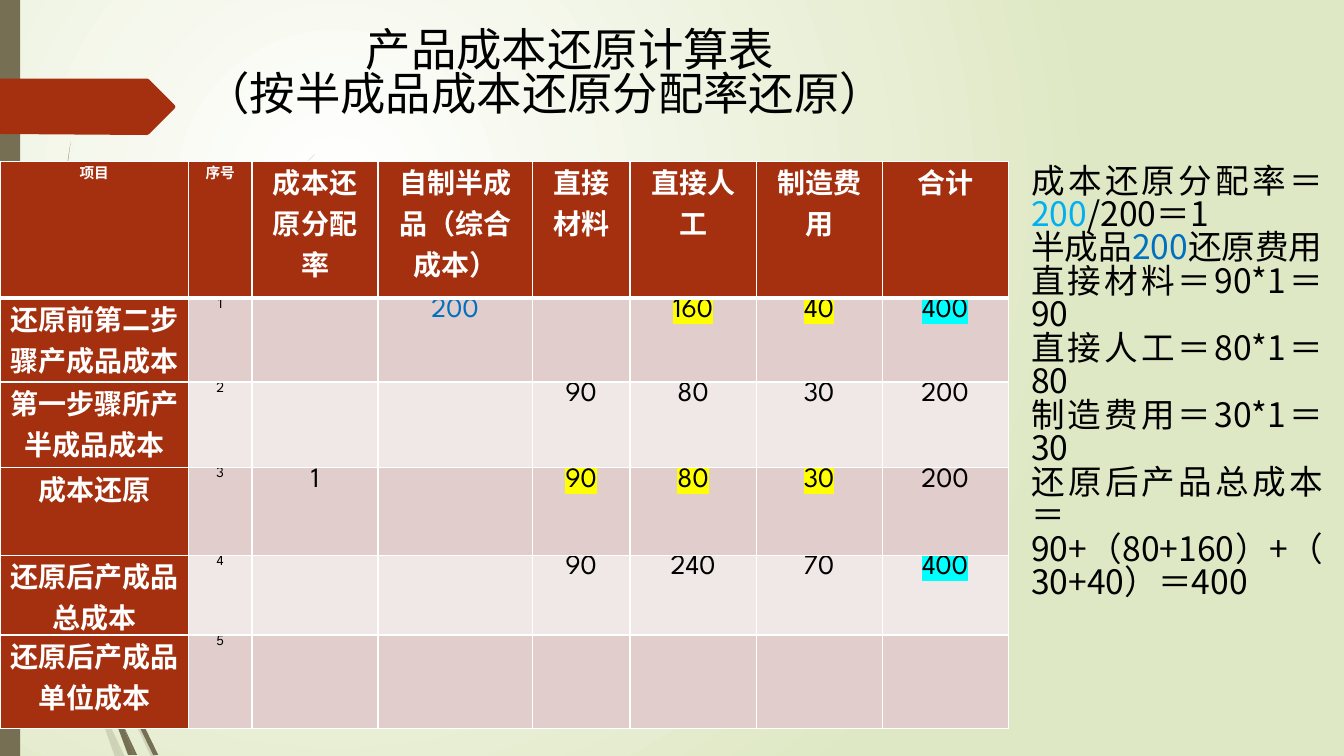
from dataclasses import dataclass

from pptx import Presentation
from pptx.dml.color import RGBColor
from pptx.enum.shapes import MSO_SHAPE
from pptx.enum.text import MSO_ANCHOR, MSO_AUTO_SIZE, PP_ALIGN
from pptx.oxml.ns import qn
from pptx.oxml.xmlchemy import OxmlElement
from pptx.util import Pt

PX = 9144
RECT = MSO_SHAPE.RECTANGLE
TOP = MSO_ANCHOR.TOP
GROW = MSO_AUTO_SIZE.SHAPE_TO_FIT_TEXT
LEFT, MID, JUST = PP_ALIGN.LEFT, PP_ALIGN.CENTER, PP_ALIGN.JUSTIFY


@dataclass(frozen=True)
class Theme:
    white: str = "FFFFFF"
    black: str = "000000"
    green: str = "DFE8C4"
    brown: str = "766F54"
    red: str = "A53010"
    bands: tuple = ("E1CDCC", "F0E8E7")
    blue: str = "0070C0"
    sky: str = "00B0F0"
    yellow: str = "FFFF00"
    cyan: str = "00FFFF"
    latin: str = "League Spartan"
    asian: str = "Noto Sans CJK SC"
    title: float = 32.4
    side: float = 24
    cell: float = 20
    small: float = 10.5


T = Theme()

PALE = [
    [(92, 607), (88, 596), (88, 610), (123, 694), (150, 751), (155, 751), (127, 692)],
    [(119, 751), (124, 751), (105, 711)],
    [(88, 584), (92, 522), (110, 462), (132, 405), (160, 349), (193, 296),
     (229, 245), (268, 198), (290, 175), (312, 154), (312, 153), (289, 175),
     (268, 197), (228, 244), (191, 294), (158, 348), (129, 403), (107, 461),
     (89, 522), (85, 584), (85, 586), (88, 596)],
    [(101, 714), (114, 751), (119, 751)],
    [(96, 692), (93, 683), (99, 707), (101, 714), (119, 751), (105, 711)],
]
DARK = [
    [(113, 649), (110, 641), (111, 656), (132, 708), (152, 749), (157, 749), (136, 706)],
    [(60, 472), (58, 453), (55, 401), (54, 349), (55, 297), (58, 245), (63, 193),
     (70, 141), (62, 193), (56, 245), (53, 297), (52, 349), (52, 399), (55, 449)],
    [(133, 749), (136, 749), (122, 719)],
    [(117, 722), (127, 749), (131, 749)],
    [(116, 706), (110, 691), (116, 717), (117, 722), (130, 749), (133, 749), (122, 719)],
]
ARROW = [(0, 78), (146, 78), (148, 79), (173, 104), (174, 106), (173, 108),
         (148, 133), (146, 134), (0, 133)]

COLS = [187, 63, 125, 153, 97, 125, 125, 125]
ROWS = [136, 83, 85, 87, 79, 93]
DATA = [
    ["项目", "序号", "成本还原分配率", "自制半成品（综合成本）",
     "直接材料", "直接人工", "制造费用", "合计"],
    ["还原前第二步骤产成品成本", "1", "", "200", "", "160", "40", "400"],
    ["第一步骤所产半成品成本", "2", "", "", "90", "80", "30", "200"],
    ["成本还原", "3", "1", "", "90", "80", "30", "200"],
    ["还原后产成品总成本", "4", "", "", "90", "240", "70", "400"],
    ["还原后产成品单位成本", "5", "", "", "", "", "", ""],
]
MARKS = {(1, 5): T.yellow, (1, 6): T.yellow, (1, 7): T.cyan, (3, 4): T.yellow,
         (3, 5): T.yellow, (3, 6): T.yellow, (4, 7): T.cyan}
HEADING = [[("产品成本还原计算表\n（按半成品成本还原分配率还原）", T.black)]]
SIDE = [
    [("成本还原分配率＝", T.black), ("200", T.sky), ("/200＝1", T.black)],
    [("半成品", T.black), ("200", T.blue), ("还原费用", T.black)],
    [("直接材料＝90*1＝90", T.black)],
    [("直接人工＝80*1＝80", T.black)],
    [("制造费用＝30*1＝30", T.black)],
    [("还原后产品总成本＝90+（80+160）+（30+40）＝400", T.black)],
]


def rgb(code):
    return RGBColor.from_string(code)


def node(tag, **attrs):
    item = OxmlElement(tag)
    for key, val in attrs.items():
        item.set(key, str(val))
    return item


def tint(tag, code):
    item = node(tag)
    item.append(node("a:srgbClr", val=code))
    return item


def style(run, size, color, face, bold=False, mark=None):
    font = run.font
    font.size, font.bold = Pt(size), bold
    font.color.rgb = rgb(color)
    font.name = face
    latin = run._r.rPr.find(qn("a:latin"))
    latin.addnext(node("a:ea", typeface=T.asian))
    if mark:
        latin.addprevious(tint("a:highlight", mark))


def paint(shape, color, alpha=None):
    shape.shadow.inherit = False
    shape.fill.solid()
    shape.fill.fore_color.rgb = rgb(color)
    shape.line.fill.background()
    if alpha:
        tone = shape._element.spPr.find(".//" + qn("a:srgbClr"))
        tone.append(node("a:alpha", val=alpha * 1000))


def outline(slide, points, color, alpha=None):
    form = slide.shapes.build_freeform(*points[0], scale=PX)
    form.add_line_segments(points[1:], close=True)
    paint(form.convert_to_shape(), color, alpha)


def backdrop(slide):
    fill = slide.background.fill
    fill.gradient()
    for stop, place, color in zip(fill.gradient_stops, (0, 1), (T.white, T.green)):
        stop.position = place
        stop.color.rgb = rgb(color)
    grad = slide._element.find(".//" + qn("a:gradFill"))
    grad.remove(grad.find(qn("a:lin")))
    round_fill = node("a:path", path="circle")
    round_fill.append(node("a:fillToRect", l=50000, t=50000, r=100000, b=100000))
    grad.find(qn("a:gsLst")).addnext(round_fill)


def textbox(slide, box, lines, size, align, space, indent=0):
    frame = slide.shapes.add_textbox(*(v * PX for v in box)).text_frame
    frame.word_wrap = True
    frame.vertical_anchor = TOP
    for i, line in enumerate(lines):
        para = frame.add_paragraph() if i else frame.paragraphs[0]
        para.alignment, para.line_spacing = align, space
        if indent:
            para._p.get_or_add_pPr().set("indent", str(indent * PX))
        for text, color in line:
            for k, part in enumerate(text.split("\n")):
                if k:
                    para.add_line_break()
                run = para.add_run()
                run.text = part
                style(run, size, color, T.asian)
    return frame


def edges(cell, row):
    props = cell._tc.get_or_add_tcPr()
    thick = {"a:lnT": row == 1, "a:lnB": row == 0}
    for i, side in enumerate(("a:lnL", "a:lnR", "a:lnT", "a:lnB")):
        line = node(side, w=Pt(3 if thick.get(side) else 1))
        line.append(tint("a:solidFill", T.white))
        props.insert(i, line)


def fill_cell(cell, row, col, text):
    head = row == 0 or col == 0
    cell.margin_left = cell.margin_right = 7 * PX
    cell.margin_top = cell.margin_bottom = 0
    cell.fill.solid()
    shade = T.red if col == 0 or row == 0 else T.bands[(row - 1) % 2]
    cell.fill.fore_color.rgb = rgb(shade)
    edges(cell, row)
    if not text:
        return
    cell.text_frame.text = text
    para = cell.text_frame.paragraphs[0]
    para.alignment = MID
    small = col == 1 or (row, col) == (0, 0)
    color = T.white if head else T.blue if (row, col) == (1, 3) else T.black
    style(para.runs[0], T.small if small else T.cell, color, T.latin,
          head, MARKS.get((row, col)))


def grid(slide, left, top):
    table = slide.shapes.add_table(len(ROWS), len(COLS), left * PX, top * PX,
                                   sum(COLS) * PX, sum(ROWS) * PX).table
    for col, width in zip(table.columns, COLS):
        col.width = width * PX
    for r, high in enumerate(ROWS):
        table.rows[r].height = high * PX
        for c, text in enumerate(DATA[r]):
            fill_cell(table.cell(r, c), r, c, text)


def main():
    deck = Presentation()
    deck.slide_width, deck.slide_height = 1333 * PX, 750 * PX
    slide = deck.slides.add_slide(deck.slide_layouts[6])
    backdrop(slide)
    for wisp in PALE:
        outline(slide, wisp, T.brown, 20)
    for wisp in DARK:
        outline(slide, wisp, T.brown)
    paint(slide.shapes.add_shape(RECT, 0, 0, 20 * PX, 750 * PX), T.brown)
    outline(slide, ARROW, T.red)
    textbox(slide, (193, 26, 704, 114), HEADING, T.title, LEFT, 0.81, 160)
    grid(slide, 0, 160)
    notes = textbox(slide, (1013, 160, 309, 495), SIDE, T.side, JUST, 0.83)
    notes.auto_size = GROW
    deck.save("out.pptx")


if __name__ == "__main__":
    main()
